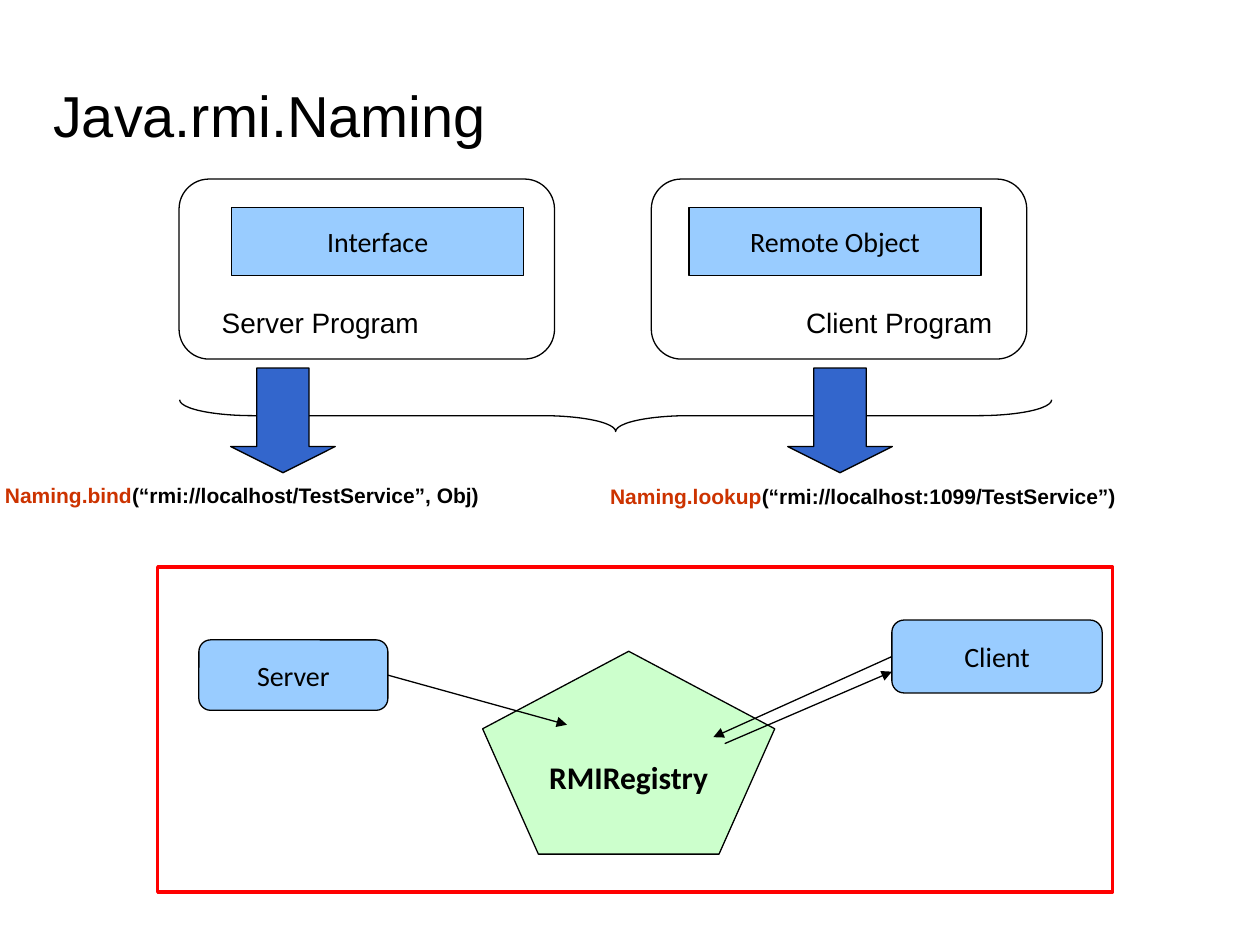
import pptx
import pptx.util
import pptx.dml.color
import pptx.enum.shapes
import pptx.enum.text
import pptx.oxml
import pptx.oxml.ns

Cm = pptx.util.Cm
Pt = pptx.util.Pt
RGBColor = pptx.dml.color.RGBColor
SHAPE = pptx.enum.shapes.MSO_SHAPE
ANCHOR = pptx.enum.text.MSO_ANCHOR
ALIGN = pptx.enum.text.PP_ALIGN

BLACK = RGBColor(0x00, 0x00, 0x00)
WHITE = RGBColor(0xFF, 0xFF, 0xFF)
RED = RGBColor(0xFF, 0x00, 0x00)
RUST = RGBColor(0xCC, 0x33, 0x00)
SKY = RGBColor(0x99, 0xCC, 0xFF)
BLUE = RGBColor(0x33, 0x66, 0xCC)
MINT = RGBColor(0xCC, 0xFF, 0xCC)

# Positions are left, top, width, height in centimetres.
TITLE = ("Java.rmi.Naming", (1.07, 1.47, 23.5, 1.85))
REGISTRY = ("RMIRegistry", (9.73, 13.13, 5.89, 4.09))
SERVER = ("Server", (4.01, 12.9, 3.81, 1.42))
CLIENT = ("Client", (17.98, 12.5, 4.24, 1.47))
FRAME = (3.18, 11.43, 19.25, 6.55)
BRACE = (12.09, -0.41, 0.64, 17.58)

# Each program: panel left, (part, left), (label, left), arrow left
PROGRAMS = [
    (13.13, ("Remote Object", 13.89), ("Client Program", 16.0), 15.88),
    (3.61, ("Interface", 4.67), ("Server Program", 4.22), 4.65),
]
CALLS = [
    ("Naming.bind", "(“rmi://localhost/TestService”, Obj)", (-0.13, 9.63, 15.88, 0.74)),
    ("Naming.lookup", "(“rmi://localhost:1099/TestService”)", (12.07, 9.65, 10.8, 0.74)),
]

deck = pptx.Presentation()
deck.slide_width, deck.slide_height = Cm(25.4), Cm(19.05)
page = deck.slides.add_slide(deck.slide_layouts[6])


def set_margins(frame, across, down):
    frame.margin_left = frame.margin_right = Cm(across)
    frame.margin_top = frame.margin_bottom = Cm(down)


def style_span(span, size, font, color=BLACK, bold=False):
    span.font.size = Pt(size)
    span.font.name = font
    span.font.color.rgb = color
    span.font.bold = bold


def add_shape(kind, place, fill=None, line=BLACK, width=0.75, adjustments=()):
    shape = page.shapes.add_shape(kind, *map(Cm, place))
    shape.shadow.inherit = False
    if fill is None:
        shape.fill.background()
    else:
        shape.fill.solid()
        shape.fill.fore_color.rgb = fill
    shape.line.color.rgb = line
    shape.line.width = Pt(width)
    for index, value in enumerate(adjustments):
        shape.adjustments[index] = value
    return shape


def add_node(kind, text, place, fill=SKY, size=16, bold=False):
    """Add a filled shape with a centred Calibri caption."""
    node = add_shape(kind, place, fill)
    frame = node.text_frame
    frame.text = text
    frame.word_wrap = False
    frame.vertical_anchor = ANCHOR.MIDDLE
    set_margins(frame, 0.23, 0.1)
    para = frame.paragraphs[0]
    para.alignment = ALIGN.CENTER
    style_span(para.runs[0], size, "Calibri", bold=bold)
    return node


def add_text(spans, place, size, bold=False, margins=(0.25, 0.13)):
    """Add an Arial text box from (text, colour) spans."""
    box = page.shapes.add_textbox(*map(Cm, place))
    box.text_frame.word_wrap = True
    set_margins(box.text_frame, *margins)
    para = box.text_frame.paragraphs[0]
    for text, color in spans:
        span = para.add_run()
        span.text = text
        style_span(span, size, "Arial", color, bold)
    return box


def add_arrow(start, end):
    arrow = page.shapes.add_connector(
        pptx.enum.shapes.MSO_CONNECTOR.STRAIGHT, *map(Cm, start + end))
    arrow.line.color.rgb = BLACK
    arrow.line.width = Pt(0.75)
    properties = arrow._element.spPr
    head = pptx.oxml.parse_xml(
        '<a:tailEnd %s type="triangle"/>' % pptx.oxml.ns.nsdecls("a"))
    properties.find(pptx.oxml.ns.qn("a:ln")).append(head)
    properties.append(pptx.oxml.parse_xml(
        "<a:effectLst %s/>" % pptx.oxml.ns.nsdecls("a")))
    return arrow


title = add_text([(TITLE[0], BLACK)], TITLE[1], 33, margins=(0, 0))
title.text_frame.vertical_anchor = ANCHOR.MIDDLE
title.text_frame.paragraphs[0].line_spacing = 0.9

# Registry exchange
add_node(SHAPE.REGULAR_PENTAGON, *REGISTRY, fill=MINT, size=18, bold=True)
client = add_node(SHAPE.ROUNDED_RECTANGLE, *CLIENT)
server = add_node(SHAPE.ROUNDED_RECTANGLE, *SERVER)
add_arrow((17.98, 13.24), (14.38, 14.86)).begin_connect(client, 1)
add_arrow((7.82, 13.61), (11.43, 14.61)).begin_connect(server, 3)
add_arrow((14.61, 14.99), (17.98, 13.54))

for method, arguments, place in CALLS:
    add_text([(method, RUST), (arguments, BLACK)], place, 12, True, (0.23, 0.1))

# Programs, with the brace that joins them
for panel_left, (part, part_left), (label, label_left), _ in PROGRAMS:
    add_shape(SHAPE.ROUNDED_RECTANGLE, (panel_left, 3.61, 7.57, 3.63), WHITE)
    add_node(SHAPE.RECTANGLE, part, (part_left, 4.19, 5.89, 1.37))
    add_text([(label, BLACK)], (label_left, 6.02, 5.0, 0.94), 16)

brace = add_shape(SHAPE.RIGHT_BRACE, BRACE, adjustments=(2.31, 0.5))
brace.rotation = 90
add_shape(SHAPE.RECTANGLE, FRAME, line=RED, width=2)
for *_, arrow_left in PROGRAMS:
    add_shape(SHAPE.DOWN_ARROW, (arrow_left, 7.42, 2.11, 2.11), BLUE,
              adjustments=(0.5, 0.25))

deck.save("out.pptx")
